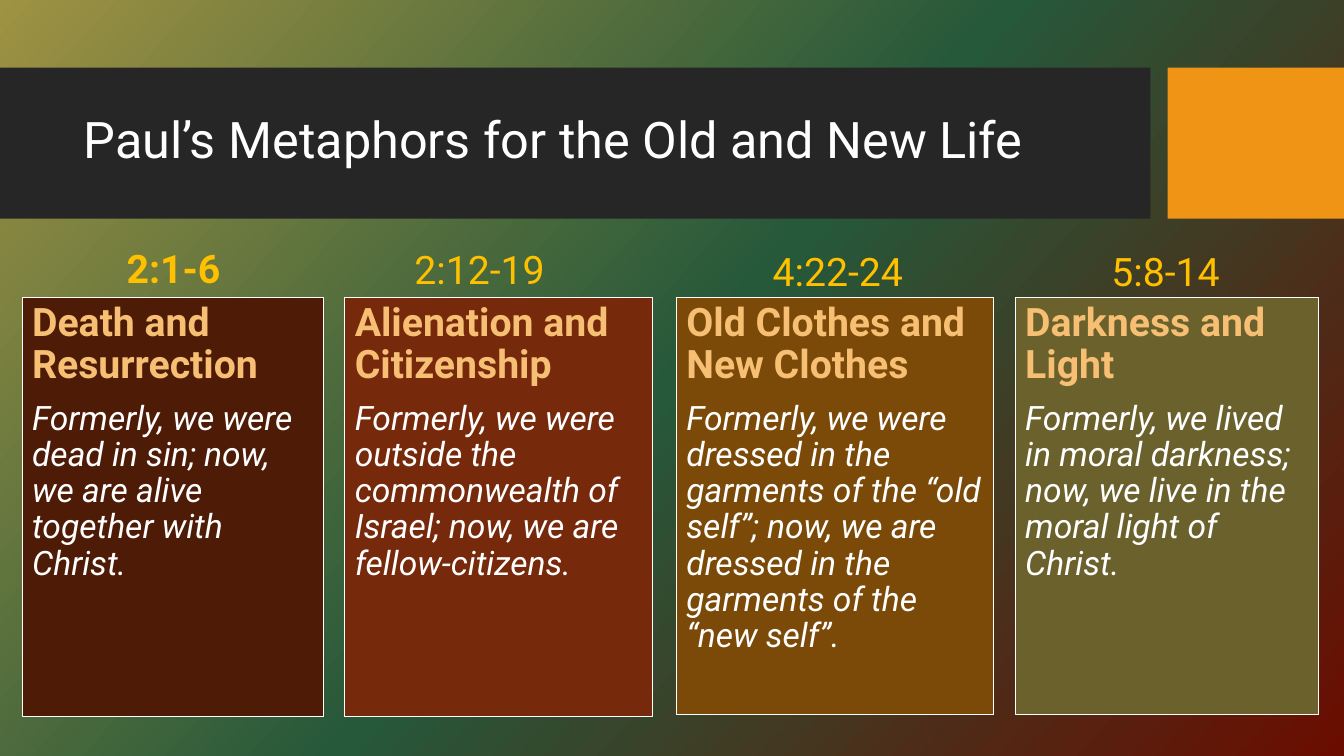
import copy

import pptx
import pptx.dml.color
import pptx.enum.shapes
import pptx.enum.text
import pptx.oxml.ns
import pptx.util

Inches = pptx.util.Inches
Pt = pptx.util.Pt
RGBColor = pptx.dml.color.RGBColor
Align = pptx.enum.text.PP_ALIGN
Anchor = pptx.enum.text.MSO_ANCHOR

FONT = "Roboto"
WHITE = RGBColor(0xFF, 0xFF, 0xFF)
CHARCOAL = RGBColor(0x26, 0x26, 0x26)
ORANGE = RGBColor(0xF0, 0x94, 0x15)
GOLD = RGBColor(0xFF, 0xC0, 0x00)
PEACH = RGBColor(0xF6, 0xBF, 0x73)
BROWN = RGBColor(0x4E, 0x1B, 0x07)
RUST = RGBColor(0x76, 0x29, 0x0B)
OCHRE = RGBColor(0x7B, 0x4A, 0x08)
OLIVE = RGBColor(0x6A, 0x61, 0x2C)
BACKGROUND_COLORS = [
    RGBColor(0x9F, 0x92, 0x42),
    RGBColor(0x26, 0x58, 0x3A),
    RGBColor(0x6A, 0x0D, 0x00),
]

TITLE = "Paul’s Metaphors for the Old and New Life"
BANDS = [(0, 11.41, CHARCOAL), (11.58, 1.75, ORANGE)]
CARD_TOP = 2.95
CARDS = [
    {
        "verses": "2:1-6", "verses_box": (0.4, 2.32, 2.64), "verses_bold": True,
        "heading": "Death and Resurrection",
        "body": "Formerly, we were dead in sin; now, we are alive together with Christ.",
        "left": 0.22, "width": 2.99, "height": 4.16, "fill": BROWN,
    },
    {
        "verses": "2:12-19", "verses_box": (3.51, 2.33, 2.49), "verses_bold": False,
        "heading": "Alienation and Citizenship",
        "body": "Formerly, we were outside the commonwealth of Israel; "
                "now, we are fellow-citizens.",
        "left": 3.42, "width": 3.05, "height": 4.16, "fill": RUST,
    },
    {
        "verses": "4:22-24", "verses_box": (6.63, 2.35, 3.36), "verses_bold": False,
        "heading": "Old Clothes and New Clothes",
        "body": "Formerly, we were dressed in the garments of the “old self”; "
                "now, we are dressed in the garments of the “new self”.",
        "left": 6.71, "width": 3.14, "height": 4.14, "fill": OCHRE,
    },
    {
        "verses": "5:8-14", "verses_box": (9.88, 2.35, 3.36), "verses_bold": False,
        "heading": "Darkness and Light",
        "body": "Formerly, we lived in moral darkness; "
                "now, we live in the moral light of Christ.",
        "left": 10.07, "width": 3.01, "height": 4.14, "fill": OLIVE,
    },
]


def format_paragraph(paragraph, size, color, bold=False, italic=False, alignment=Align.LEFT):
    paragraph.alignment = alignment
    paragraph.line_spacing = 0.9
    for run in paragraph.runs:
        run.font.name = FONT
        run.font.size = Pt(size)
        run.font.color.rgb = color
        run.font.bold = bold
        run.font.italic = italic


def paint_background(slide):
    fill = slide.background.fill
    fill.gradient()
    fill.gradient_angle = 360 - 42
    stop_list = next(slide.element.iter(pptx.oxml.ns.qn("a:gsLst")))
    stop_list.append(copy.deepcopy(stop_list[-1]))
    for index, (stop, color) in enumerate(zip(fill.gradient_stops, BACKGROUND_COLORS)):
        stop.position = index / 2
        stop.color.rgb = color


def add_rectangle(slide, left, top, width, height, color):
    shape = slide.shapes.add_shape(
        pptx.enum.shapes.MSO_SHAPE.RECTANGLE,
        Inches(left), Inches(top), Inches(width), Inches(height))
    shape.shadow.inherit = False
    shape.fill.solid()
    shape.fill.fore_color.rgb = color
    shape.line.fill.background()
    return shape


def add_title(slide):
    title = slide.shapes.title
    title.left, title.top = Inches(0.73), Inches(0.82)
    title.width, title.height = Inches(10.53), Inches(1.18)
    title.text_frame.text = TITLE
    title.text_frame.vertical_anchor = Anchor.MIDDLE
    format_paragraph(title.text_frame.paragraphs[0], 36, WHITE)
    slide.shapes.element.append(title.element)


def add_verses(slide, card):
    left, top, width = card["verses_box"]
    box = slide.shapes.add_textbox(Inches(left), Inches(top), Inches(width), Inches(0.63))
    frame = box.text_frame
    frame.word_wrap = True
    frame.vertical_anchor = Anchor.BOTTOM
    frame.text = card["verses"]
    format_paragraph(frame.paragraphs[0], 28, GOLD,
                     bold=card["verses_bold"], alignment=Align.CENTER)


def add_card(slide, card):
    shape = add_rectangle(slide, card["left"], CARD_TOP, card["width"],
                          card["height"], card["fill"])
    shape.line.color.rgb = WHITE
    shape.line.width = Pt(0.75)
    frame = shape.text_frame
    frame.word_wrap = True
    frame.vertical_anchor = Anchor.TOP
    frame.text = card["heading"]
    format_paragraph(frame.paragraphs[0], 28, PEACH, bold=True)
    body = frame.add_paragraph()
    body.text = card["body"]
    body.space_before = Pt(10)
    format_paragraph(body, 24, WHITE, italic=True)


def main():
    presentation = pptx.Presentation()
    presentation.slide_width = Inches(13.33)
    presentation.slide_height = Inches(7.5)
    slide = presentation.slides.add_slide(presentation.slide_layouts[5])
    paint_background(slide)
    for left, width, color in BANDS:
        add_rectangle(slide, left, 0.67, width, 1.5, color)
    add_title(slide)
    for card in CARDS:
        add_verses(slide, card)
        add_card(slide, card)
    presentation.save("out.pptx")


if __name__ == "__main__":
    main()
